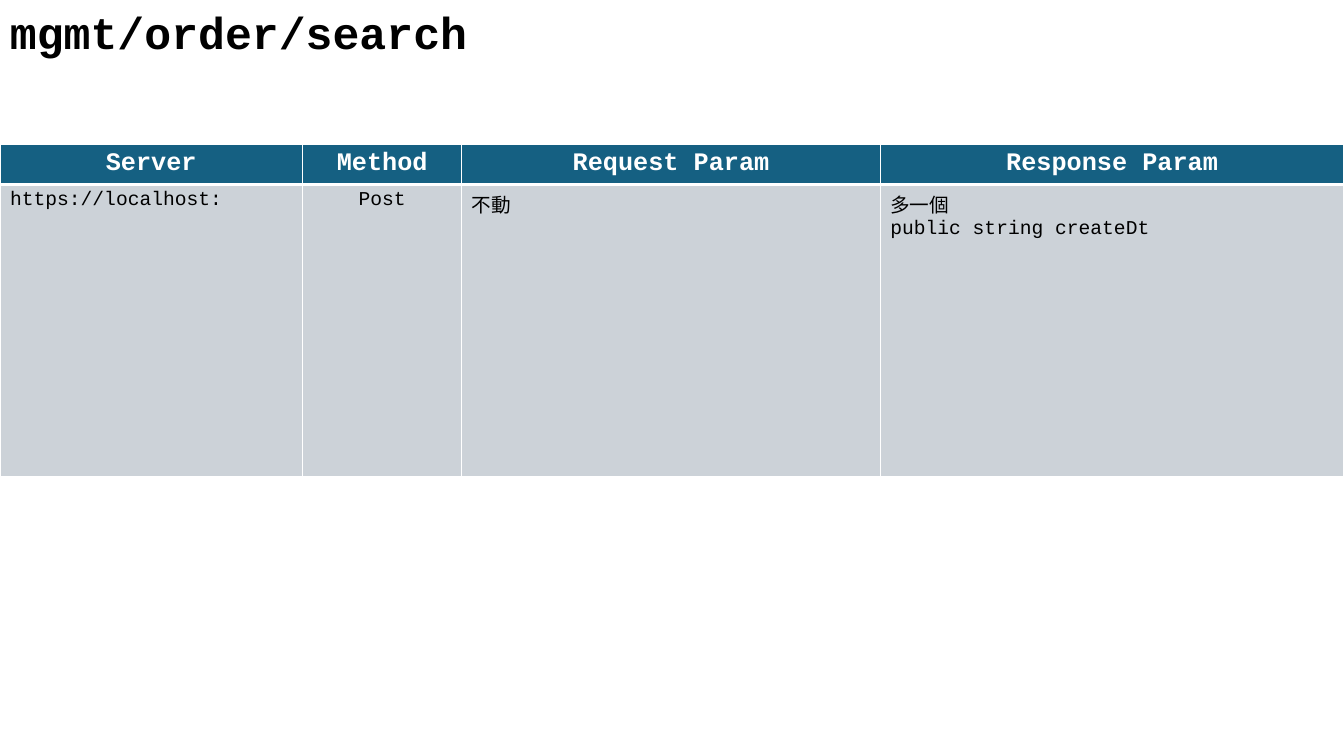
from dataclasses import dataclass

from lxml import etree
from pptx import Presentation
from pptx.dml.color import RGBColor
from pptx.enum.text import MSO_AUTO_SIZE, PP_ALIGN
from pptx.oxml.ns import qn
from pptx.util import Inches, Pt

LEFT, CENTER = PP_ALIGN.LEFT, PP_ALIGN.CENTER
FIT_TEXT = MSO_AUTO_SIZE.SHAPE_TO_FIT_TEXT


@dataclass(frozen=True)
class Theme:
    font: str = "Courier New"
    ink: str = "000000"
    paper: str = "FFFFFF"
    header: str = "156082"
    body: str = "CCD2D8"
    title_size: int = 32
    header_size: int = 18
    body_size: int = 14
    rule: int = 1
    header_rule: int = 3


theme = Theme()


def write(paragraph, text, size, color, bold, align=LEFT):
    paragraph.alignment = align
    run = paragraph.add_run()
    run.text = text
    run.font.name = theme.font
    run.font.size = Pt(size)
    run.font.bold = bold
    run.font.color.rgb = RGBColor.from_string(color)


def draw_border(cell, side, width):
    properties = cell._tc.get_or_add_tcPr()
    line = etree.SubElement(properties, qn(f"a:ln{side}"), w=str(Pt(width)))
    fill = etree.SubElement(line, qn("a:solidFill"))
    etree.SubElement(fill, qn("a:srgbClr"), val=theme.paper)


deck = Presentation()
deck.slide_width, deck.slide_height = Inches(13.33), Inches(7.5)
slide = deck.slides.add_slide(deck.slide_layouts[6])

title = slide.shapes.add_textbox(0, 0, Inches(9.45), Inches(0.64)).text_frame
title.word_wrap = True
title.auto_size = FIT_TEXT
write(title.paragraphs[0], "mgmt/order/search", theme.title_size, theme.ink, True)

columns = [
    ("Server", 3, LEFT, ["https://localhost:"]),
    ("Method", 1.58, CENTER, ["Post"]),
    ("Request Param", 4.15, LEFT, ["不動"]),
    ("Response Param", 4.6, LEFT, ["多一個", "public string createDt"]),
]
row_heights = [0.4, 2.9]

endpoint = slide.shapes.add_table(
    len(row_heights), len(columns), 0, Inches(1.43), deck.slide_width, Inches(sum(row_heights))
).table
for row, height in zip(endpoint.rows, row_heights):
    row.height = Inches(height)

for index, (heading, width, align, details) in enumerate(columns):
    endpoint.columns[index].width = Inches(width)
    levels = [
        ([heading], theme.header_size, theme.paper, True, CENTER, theme.header),
        (details, theme.body_size, theme.ink, False, align, theme.body),
    ]
    for level, (lines, size, color, bold, alignment, background) in enumerate(levels):
        cell = endpoint.cell(level, index)
        for number, line in enumerate(lines):
            paragraph = cell.text_frame.add_paragraph() if number else cell.text_frame.paragraphs[0]
            write(paragraph, line, size, color, bold, alignment)
        top, bottom = [(theme.rule, theme.header_rule), (theme.header_rule, theme.rule)][level]
        for side, weight in zip("LRTB", (theme.rule, theme.rule, top, bottom)):
            draw_border(cell, side, weight)
        cell.fill.solid()
        cell.fill.fore_color.rgb = RGBColor.from_string(background)

deck.save("out.pptx")
